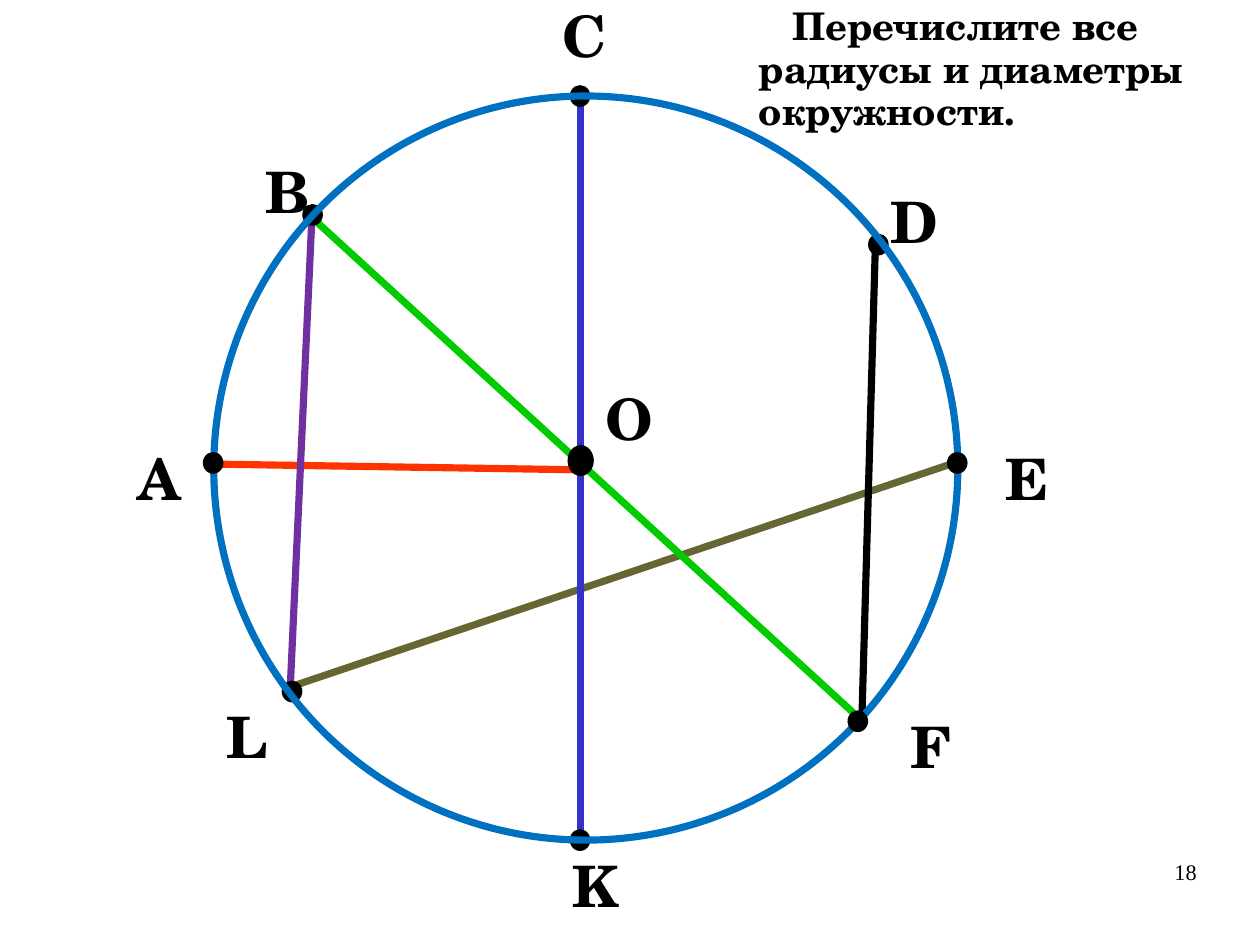
import pptx
import pptx.dml.color
import pptx.enum.shapes
import pptx.enum.text
import pptx.oxml
import pptx.util
from pptx.util import Inches

RGBColor = pptx.dml.color.RGBColor
Align = pptx.enum.text.PP_ALIGN
AutoSize = pptx.enum.text.MSO_AUTO_SIZE

BLACK = RGBColor(0x00, 0x00, 0x00)
CIRCLE_BLUE = RGBColor(0x00, 0x70, 0xC0)
OLIVE = RGBColor(0x66, 0x66, 0x33)
INDIGO = RGBColor(0x33, 0x33, 0xCC)
GREEN = RGBColor(0x00, 0xCC, 0x00)
RED = RGBColor(0xFF, 0x33, 0x00)
PURPLE = RGBColor(0x70, 0x30, 0xA0)

CM_PER_INCH = 2.54
SCHOLA = "TeX Gyre Schola"
THICK = 4.5
LABEL_HEIGHT = 0.68
DOT_WIDTH, DOT_HEIGHT = 0.17, 0.18

SEGMENTS = [
    (2.54, 6.01, 8.32, 4.06, OLIVE),
    (5.08, 0.75, 5.08, 7.35, INDIGO),
    (2.78, 1.95, 7.47, 6.24, GREEN),
    (1.84, 4.06, 5.04, 4.11, RED),
    (2.73, 1.88, 2.54, 6.01, PURPLE),
    (7.54, 6.32, 7.66, 2.1, BLACK),
]
DOTS_UNDER_CIRCLE = [(2.65, 1.79), (2.47, 5.96), (4.99, 0.75), (7.6, 2.05), (4.99, 7.26)]
DOTS_OVER_CIRCLE = [(1.78, 3.96), (7.42, 6.22), (8.29, 3.96)]
LABELS = [
    ("А", 1.09, 3.87, 0.61),
    ("В", 2.21, 1.36, 0.61),
    ("С", 4.81, 0, 0.52),
    ("D", 7.68, 1.62, 0.43),
    ("E", 8.55, 3.87, 0.87),
    ("F", 7.86, 6.22, 0.52),
    ("K", 4.9, 7.43, 0.61),
    ("L", 1.87, 6.13, 0.35),
    ("O", 5.16, 3.35, 0.69),
]


def add_segment(slide, x1, y1, x2, y2, color):
    segment = slide.shapes.add_connector(
        pptx.enum.shapes.MSO_CONNECTOR.STRAIGHT,
        Inches(x1), Inches(y1), Inches(x2), Inches(y2))
    segment.line.color.rgb = color
    segment.line.width = pptx.util.Pt(THICK)
    properties = segment._element.spPr
    properties.append(properties.makeelement(pptx.oxml.ns.qn("a:effectLst"), {}))


def add_ellipse(slide, left, top, width, height, line_color, line_width):
    ellipse = slide.shapes.add_shape(
        pptx.enum.shapes.MSO_SHAPE.OVAL,
        Inches(left), Inches(top), Inches(width), Inches(height))
    ellipse.shadow.inherit = False
    ellipse.fill.background()
    ellipse.line.color.rgb = line_color
    ellipse.line.width = pptx.util.Pt(line_width)
    return ellipse


def add_dot(slide, left, top, width=DOT_WIDTH, height=DOT_HEIGHT):
    dot = add_ellipse(slide, left, top, width, height, BLACK, 0.75)
    dot.fill.solid()
    dot.fill.fore_color.rgb = BLACK


def add_text(slide, text, left, top, width, height, size, alignment,
             font_name=SCHOLA, bold=True, spacing=0.93, insets=(0.11, 0.06),
             auto_size=AutoSize.SHAPE_TO_FIT_TEXT):
    box = slide.shapes.add_textbox(
        Inches(left), Inches(top), Inches(width), Inches(height))
    frame = box.text_frame
    frame.word_wrap = True
    frame.auto_size = auto_size
    frame.margin_left = frame.margin_right = Inches(insets[0])
    frame.margin_top = frame.margin_bottom = Inches(insets[1])
    paragraph = frame.paragraphs[0]
    paragraph.text = text
    paragraph.alignment = alignment
    paragraph.line_spacing = spacing
    paragraph.font.name = font_name
    paragraph.font.size = pptx.util.Pt(size)
    paragraph.font.bold = bold
    paragraph.font.color.rgb = BLACK
    return paragraph


def main():
    presentation = pptx.Presentation()
    presentation.slide_width = Inches(28 / CM_PER_INCH)
    presentation.slide_height = Inches(21 / CM_PER_INCH)
    slide = presentation.slides.add_slide(presentation.slide_layouts[6])

    for segment in SEGMENTS:
        add_segment(slide, *segment)
    for left, top in DOTS_UNDER_CIRCLE:
        add_dot(slide, left, top)
    add_ellipse(slide, 1.87, 0.84, 6.51, 6.51, CIRCLE_BLUE, THICK)
    add_dot(slide, 4.97, 3.9, 0.22, 0.26)
    for left, top in DOTS_OVER_CIRCLE:
        add_dot(slide, left, top)

    for letter, left, top, width in LABELS:
        add_text(slide, letter, left, top, width, LABEL_HEIGHT, 36, Align.CENTER)
    task = add_text(slide, "Перечислите все радиусы и диаметры окружности.",
                    6.53, 0, 4.5, 1.24, 24, Align.LEFT)
    task._p.get_or_add_pPr().set("indent", str(Inches(0.29)))
    add_text(slide, "18", 7.9, 7.53, 2.57, 0.57, 14, Align.RIGHT,
             font_name="Times New Roman", bold=False, spacing=0.95,
             insets=(0, 0), auto_size=AutoSize.NONE)

    presentation.save("out.pptx")


if __name__ == "__main__":
    main()
